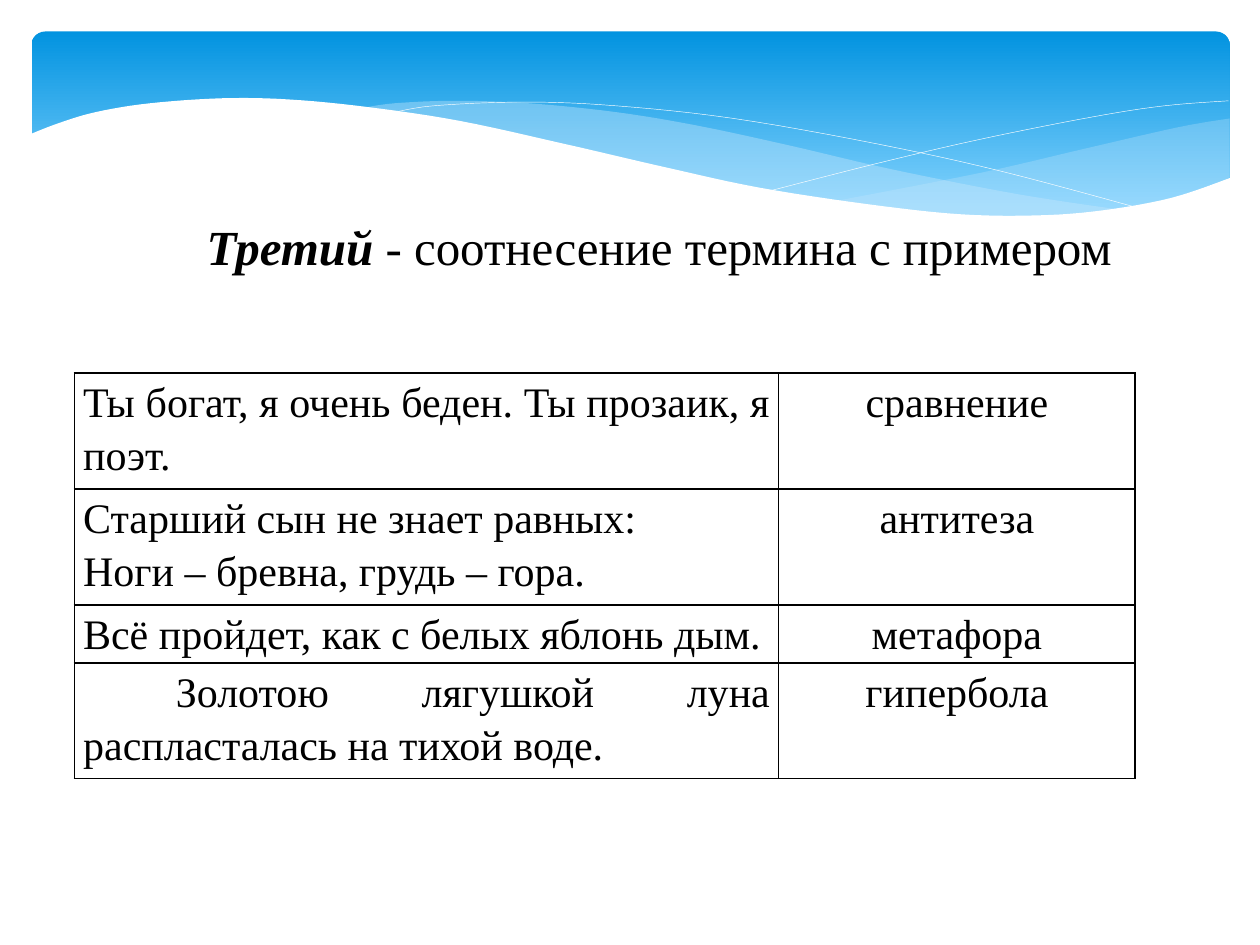
from dataclasses import dataclass
from typing import Optional

from lxml.etree import SubElement
from pptx import Presentation
from pptx.dml.color import RGBColor
from pptx.enum.shapes import MSO_SHAPE as Shape
from pptx.enum.text import MSO_ANCHOR as Anchor
from pptx.enum.text import MSO_AUTO_SIZE as AutoSize
from pptx.enum.text import PP_ALIGN as Align
from pptx.oxml.ns import qn
from pptx.util import Inches, Pt

FONT = "Times New Roman"
BLACK, WHITE, PALE_BLUE = "000000", "FFFFFF", "C6E7FC"
COLUMNS, ROWS = 100, 75
STEPS = 6

Point = tuple[float, float]


@dataclass
class Wave:
    edges: list[list[Point]]
    fill: Optional[str] = None
    opacity: int = 100


@dataclass
class Match:
    example: str
    term: str
    height: float


WAVES = [
    Wave([[(97.6, 9.4), (93.5, 10.1), (86.1, 11.8), (77.9, 13.7), (66.1, 16)],
          [(66.1, 16), (73.2, 16.8), (80.3, 17.2), (87.2, 16.9), (92.8, 15.8), (97.6, 14.1)]],
         PALE_BLUE, 29),
    Wave([[(89.3, 16.7), (80.7, 15.4), (70.6, 13.4), (62.9, 11.6), (55.5, 10),
           (48.9, 8.9), (42, 8.2), (36.1, 8), (31.3, 8.2), (28.6, 8.6)],
          [(28.6, 8.6), (36.2, 9.7), (44.9, 11.6), (56.6, 14.3), (65, 15.8),
           (73.6, 16.9), (80.7, 17.3), (85.7, 17.1), (89.3, 16.7)]],
         PALE_BLUE, 40),
    Wave([[(30.9, 9), (34.4, 8.4), (41.6, 8.1), (48.9, 8.4), (58.2, 9.4),
           (69.5, 11.4), (79.5, 13.6), (90.7, 16.6)]]),
    Wave([[(61.3, 15.1), (69.5, 13), (77.6, 11.1), (86.6, 9.3), (92.4, 8.4), (97.5, 8)]]),
    Wave([[(97.7, 14.1), (93, 15.7), (87.5, 16.7), (82.3, 17.1), (76.1, 17),
           (68.8, 16.2), (60.3, 14.9), (52.9, 13.3), (44.7, 11.4), (36.5, 9.6),
           (29.2, 8.5), (23, 7.9), (17.7, 7.8), (11.9, 8.2), (7.6, 8.9),
           (4.6, 9.8), (2.3, 10.7)],
          [(2.3, 22.4), (97.7, 22.4)]],
         WHITE),
]

MATCHES = [
    Match("Ты богат, я очень беден. Ты прозаик, я поэт.", "сравнение", 9.2),
    Match("Старший сын не знает равных:\nНоги – бревна, грудь – гора.", "антитеза", 9.2),
    Match("Всё пройдет, как с белых яблонь дым.", "метафора", 4.6),
    Match(" Золотою лягушкой луна распласталась на тихой воде.", "гипербола", 9.2),
]

presentation = Presentation()
presentation.slide_width, presentation.slide_height = Inches(10), Inches(7.5)
slide = presentation.slides.add_slide(presentation.slide_layouts[5])


def across(columns: float) -> int:
    return round(presentation.slide_width * columns / COLUMNS)


def down(rows: float) -> int:
    return round(presentation.slide_height * rows / ROWS)


def color(value: str) -> RGBColor:
    return RGBColor.from_string(value)


def smooth(knots: list[Point]) -> list[Point]:
    padded = [knots[0], *knots, knots[-1]]
    points = [knots[0]]
    for a, b, c, d in zip(padded, padded[1:], padded[2:], padded[3:]):
        for step in range(1, STEPS + 1):
            t = step / STEPS
            x, y = (
                (2 * q + (r - p) * t + (2 * p - 5 * q + 4 * r - s) * t**2
                 + (3 * q - p - 3 * r + s) * t**3) / 2
                for p, q, r, s in zip(a, b, c, d)
            )
            points.append((x, y))
    return points


def draw_banner() -> None:
    banner = slide.shapes.add_shape(
        Shape.ROUNDED_RECTANGLE, across(2.5), down(2.5), across(95.1), down(15.6))
    banner.adjustments[0] = 0.07
    banner.shadow.inherit = False
    banner.line.fill.background()
    banner.fill.gradient()
    banner.fill.gradient_angle = 270
    stops = (("0293E0", 0), ("83D3FE", 0.9))
    for stop, (value, position) in zip(banner.fill.gradient_stops, stops):
        stop.color.rgb, stop.position = color(value), position


def draw_wave(wave: Wave) -> None:
    points = [(across(x), down(y)) for edge in wave.edges for x, y in smooth(edge)]
    builder = slide.shapes.build_freeform(*points[0])
    builder.add_line_segments(points[1:], close=wave.fill is not None)
    shape = builder.convert_to_shape()
    shape.shadow.inherit = False
    if wave.fill is None:
        shape.fill.background()
        shape.line.color.rgb, shape.line.width = color(WHITE), Pt(0.25)
        return
    shape.line.fill.background()
    shape.fill.solid()
    shape.fill.fore_color.rgb = color(wave.fill)
    if wave.opacity < 100:
        tint = shape.element.spPr.find(f"{qn('a:solidFill')}/{qn('a:srgbClr')}")
        SubElement(tint, qn("a:alpha"), val=str(wave.opacity * 1000))


def format_run(run, size: int, emphasis: bool = False) -> None:
    run.font.name, run.font.size = FONT, Pt(size)
    run.font.color.rgb = color(BLACK)
    run.font.bold = run.font.italic = emphasis


def write_title() -> None:
    title = slide.shapes.title
    title.left, title.top = across(15.4), down(16.7)
    title.width, title.height = across(74.6), down(5.7)
    frame = title.text_frame
    frame.word_wrap, frame.auto_size = False, AutoSize.SHAPE_TO_FIT_TEXT
    frame.vertical_anchor = Anchor.TOP
    paragraph = frame.paragraphs[0]
    paragraph.text, paragraph.alignment = "Третий", Align.LEFT
    paragraph.add_run().text = " - соотнесение термина с примером"
    for run, emphasis in zip(paragraph.runs, (True, False)):
        format_run(run, 28, emphasis)
    title.element.getparent().append(title.element)


def fill_cell(cell, text: str, alignment: Align) -> None:
    cell.margin_left = cell.margin_right = Inches(0.07)
    cell.margin_top = cell.margin_bottom = 0
    properties = cell._tc.get_or_add_tcPr()
    for side in ("lnL", "lnR", "lnT", "lnB"):
        border = SubElement(properties, qn(f"a:{side}"), w=str(Pt(1)))
        solid = SubElement(border, qn("a:solidFill"))
        SubElement(solid, qn("a:srgbClr"), val=BLACK)
    cell.fill.background()
    cell.text_frame.text = text
    for paragraph in cell.text_frame.paragraphs:
        paragraph.alignment, paragraph.line_spacing = alignment, 1.15
        for run in paragraph.runs:
            format_run(run, 24)


def draw_table(matches: list[Match]) -> None:
    widths = (55.9, 28.3)
    height = sum(match.height for match in matches)
    table = slide.shapes.add_table(
        len(matches), len(widths), across(5.9), down(29.6),
        across(sum(widths)), down(height)).table
    table.first_row = table.horz_banding = False
    for column, width in zip(table.columns, widths):
        column.width = across(width)
    for index, match in enumerate(matches):
        table.rows[index].height = down(match.height)
        fill_cell(table.cell(index, 0), match.example, Align.JUSTIFY)
        fill_cell(table.cell(index, 1), match.term, Align.CENTER)


def main() -> None:
    draw_banner()
    for wave in WAVES:
        draw_wave(wave)
    write_title()
    draw_table(MATCHES)
    presentation.save("out.pptx")


if __name__ == "__main__":
    main()
